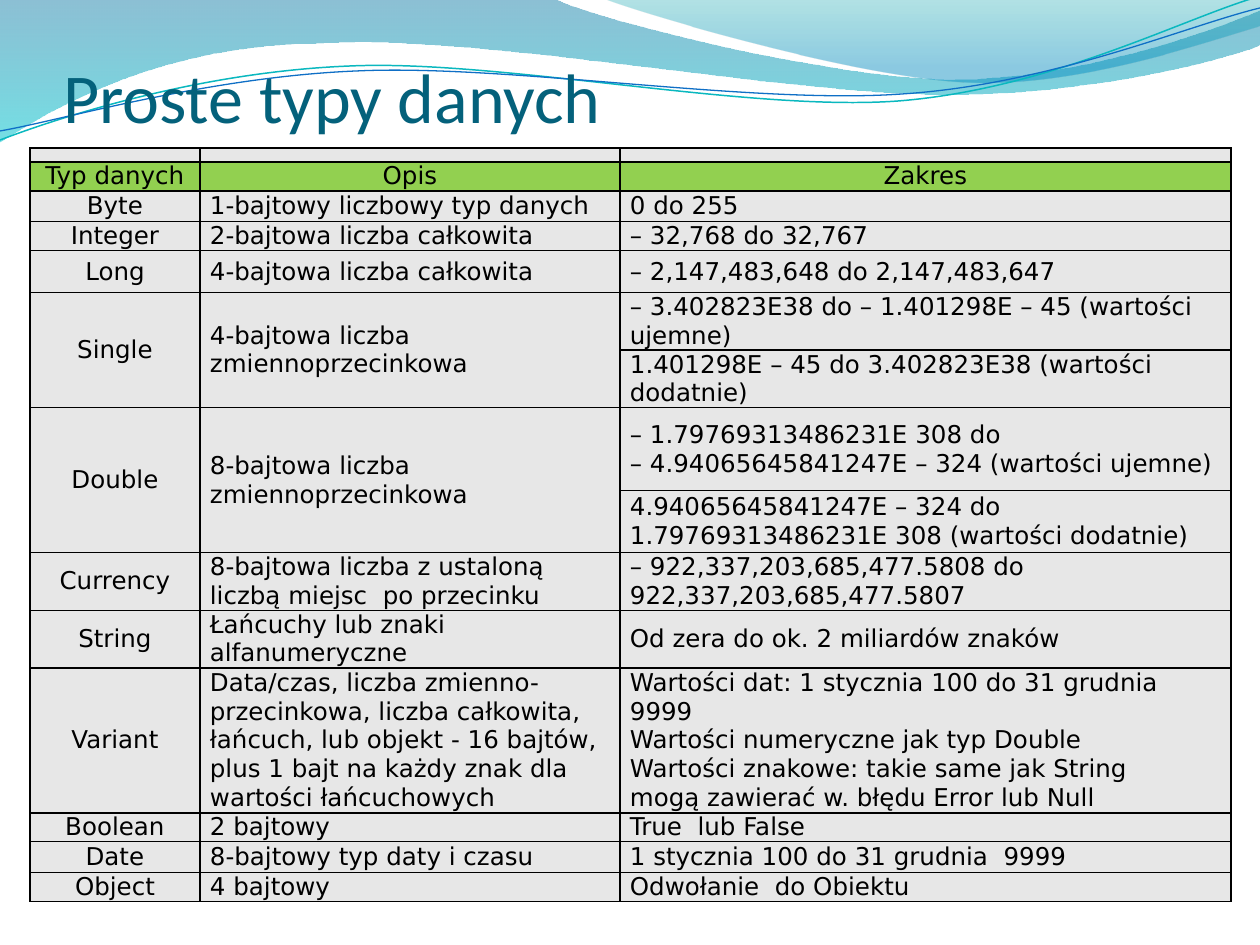
from lxml.etree import SubElement
from pptx import Presentation
from pptx.dml.color import RGBColor
from pptx.enum.text import MSO_ANCHOR, PP_ALIGN
from pptx.oxml.ns import qn
from pptx.util import Pt

HUES = {"text": "000000", "title": "04617B", "cell": "E7E7E7", "head": "92D050",
        "teal": "0AB8BF", "blue": "0F6FC6"}
TITLE = "Proste typy danych"
COLS = [170, 420, 611]
# Least row height and cells; None continues the cell above, \v breaks a line.
ROWS = [
    (14, "", "", ""),
    (26, "Typ danych", "Opis", "Zakres"),
    (31, "Byte", "1-bajtowy liczbowy typ danych", "0 do 255"),
    (26, "Integer", "2-bajtowa liczba całkowita", "– 32,768 do 32,767"),
    (42, "Long", "4-bajtowa liczba całkowita", "– 2,147,483,648 do 2,147,483,647"),
    (42, "Single", "4-bajtowa liczba zmiennoprzecinkowa",
     "– 3.402823E38 do – 1.401298E – 45 (wartości ujemne)"),
    (52, None, None, "1.401298E – 45 do 3.402823E38 (wartości dodatnie)"),
    (83, "Double", "8-bajtowa liczba zmiennoprzecinkowa",
     "– 1.79769313486231E 308 do\v– 4.94065645841247E – 324 (wartości ujemne)"),
    (62, None, None,
     "4.94065645841247E – 324 do 1.79769313486231E 308 (wartości dodatnie)"),
    (52, "Currency", "8-bajtowa liczba z ustaloną liczbą miejsc  po przecinku",
     "– 922,337,203,685,477.5808 do 922,337,203,685,477.5807"),
    (42, "String", "Łańcuchy lub znaki alfanumeryczne", "Od zera do ok. 2 miliardów znaków"),
    (145, "Variant",
     "Data/czas, liczba zmienno-przecinkowa, liczba całkowita, łańcuch, lub objekt "
     "- 16 bajtów, plus 1 bajt na każdy znak dla wartości łańcuchowych",
     "Wartości dat: 1 stycznia 100 do 31 grudnia 9999 \vWartości numeryczne jak typ Double\n"
     "Wartości znakowe: takie same jak String \vmogą zawierać w. błędu Error lub Null"),
    (26, "Boolean", "2 bajtowy", "True  lub False"),
    (31, "Date", "8-bajtowy typ daty i czasu", "1 stycznia 100 do 31 grudnia  9999"),
    (26, "Object", "4 bajtowy", "Odwołanie  do Obiektu"),
]
# Start point, then lines (2 numbers) and curves (6 numbers).
BAND = [(0, -1), (554, -1), (600, 21, 837, 79, 955, 79), (1075, 79, 1207, 33, 1260, 11),
        (1261, 45), (1239, 55, 1096, 96, 940, 94), (784, 94, 481, 35, 324, 43),
        (163, 44, 58, 105, -1, 142), (0, -1)]
DIP = [(604, -1), (641, 14, 859, 78, 969, 82), (1079, 87, 1211, 40, 1260, 26),
       (1260, 0), (604, -1)]
TEAL = [(0, 140), (60, 117, 199, 72, 349, 66), (498, 59, 747, 112, 898, 101),
        (1050, 89, 1182, 19, 1257, -3)]
BLUE = [(0, 131), (59, 121, 207, 77, 357, 71), (508, 64, 752, 105, 903, 94),
        (1053, 84, 1186, 26, 1260, 8)]
# Position, colour and opacity (%) of each gradient stop.
FILLS = [(BAND, [(0, "0074A1", 45), (1, "00C6CF", 55)]),
         (DIP, [(0, "00A1A9", 30), (0.8, "008BBF", 45)])]
LINES = [(TEAL, "teal", 0.85), (BLUE, "blue", 0.75)]


def px(n):
    return round(n * 914400 / 126)


def rgb(name):
    return RGBColor.from_string(HUES.get(name, name))


def write(frame, text, size=14, font="DejaVu Sans", hue="text", align=PP_ALIGN.LEFT):
    frame.text = text
    for para in frame.paragraphs:
        para.alignment = align
        for run in para.runs:
            run.font.size, run.font.name = Pt(size), font
            run.font.color.rgb = rgb(hue)
        for br in para._p.findall(qn("a:br")):
            SubElement(br, qn("a:rPr"), sz=str(size * 100))
        if not text:
            SubElement(para._p, qn("a:endParaRPr"), sz=str(size * 100))


def draw(shapes, wave, close):
    """Build an outline through the end points, then bend its curved parts."""
    start, *parts = wave
    pen = shapes.build_freeform(px(start[0]), px(start[1]), scale=1.0)
    pen.add_line_segments([(px(p[-2]), px(p[-1])) for p in parts], close=close)
    shape = pen.convert_to_shape()
    shape.shadow.inherit = False
    for line, part in zip(list(shape.element.iter(qn("a:lnTo"))), parts):
        if len(part) == 6:
            bend = line.makeelement(qn("a:cubicBezTo"))
            for x, y in zip(part[::2], part[1::2]):
                SubElement(bend, qn("a:pt"), x=str(px(x) - shape.left),
                           y=str(px(y) - shape.top))
            line.getparent().replace(line, bend)
    return shape


def shade(shape, stops):
    shape.line.fill.background()
    shape.fill.gradient()
    shape.fill.gradient_angle = 270
    for stop, (place, hue, _) in zip(shape.fill.gradient_stops, stops):
        stop.position = place
        stop.color.rgb = rgb(hue)
    tags = list(shape.element.iter(qn("a:srgbClr")))
    for tag, (_, _, part) in zip(tags, stops):
        SubElement(tag, qn("a:alpha"), val=str(part * 1000))


def style(cell, hue):
    cell.margin_left = cell.margin_right = px(10)
    cell.margin_top = cell.margin_bottom = 0
    cell.vertical_anchor = MSO_ANCHOR.MIDDLE
    props = cell._tc.get_or_add_tcPr()
    for side in ("lnL", "lnR", "lnT", "lnB"):
        line = SubElement(props, qn(f"a:{side}"), w=str(Pt(1)))
        fill = SubElement(line, qn("a:solidFill"))
        SubElement(fill, qn("a:srgbClr"), val=HUES["text"])
    cell.fill.solid()
    cell.fill.fore_color.rgb = rgb(hue)


def fill_table(shapes):
    frame = shapes.add_table(len(ROWS), len(COLS), px(30), px(148), px(sum(COLS)), px(768))
    table = frame.table
    table.first_row = table.horz_banding = False
    for col, wide in zip(table.columns, COLS):
        col.width = px(wide)
    for r, (high, *texts) in enumerate(ROWS):
        table.rows[r].height = px(high)
        for c, text in enumerate(texts):
            cell = table.cell(r, c)
            style(cell, "head" if r == 1 else "cell")
            mid = c == 0 or r == 1
            write(cell.text_frame, text or "", size=14 if text else 6,
                  align=PP_ALIGN.CENTER if mid else PP_ALIGN.LEFT)
            if text is None:
                table.cell(r - 1, c).merge(cell)
    frame.height = px(768)


def main():
    deck = Presentation()
    deck.slide_width, deck.slide_height = px(1260), px(945)
    slide = deck.slides.add_slide(deck.slide_layouts[5])
    shapes = slide.shapes
    for wave, stops in FILLS:
        shade(draw(shapes, wave, True), stops)
    for wave, hue, wide in LINES:
        line = draw(shapes, wave, False)
        line.fill.background()
        line.line.color.rgb = rgb(hue)
        line.line.width = Pt(wide)

    title = shapes.title
    title.left, title.top, title.width, title.height = map(px, (63, 38, 1134, 100))
    frame = title.text_frame
    frame.margin_left = frame.margin_right = frame.margin_bottom = 0
    frame.margin_top = px(6)
    frame.vertical_anchor = MSO_ANCHOR.BOTTOM
    write(frame, TITLE, size=40, font="Calibri", hue="title")
    shapes.element.append(title.element)  # in front of the waves

    fill_table(shapes)
    deck.save("out.pptx")


if __name__ == "__main__":
    main()
